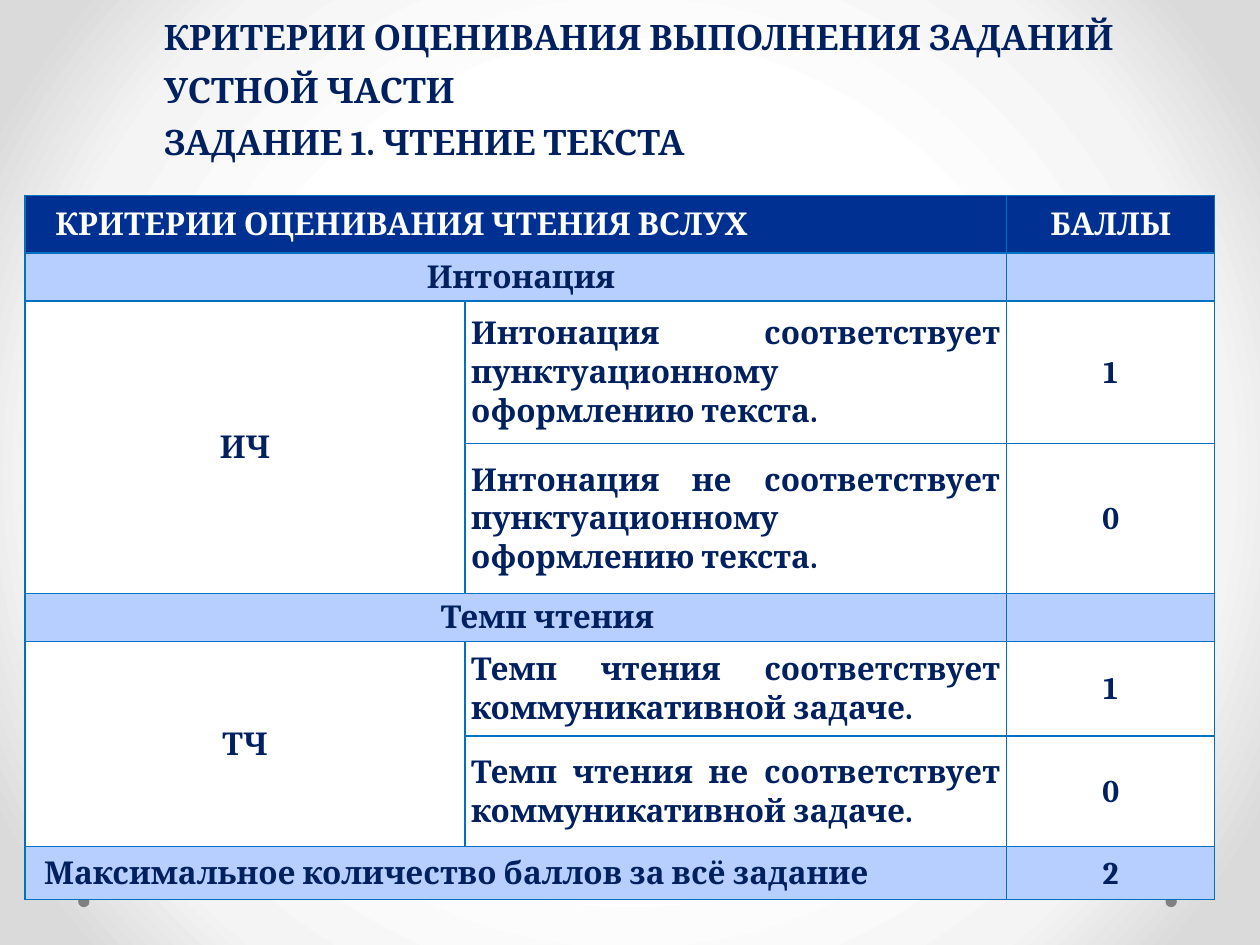
from pptx import Presentation
from pptx.dml.color import RGBColor
from pptx.enum.shapes import MSO_SHAPE as Shape
from pptx.enum.text import MSO_ANCHOR as Anchor, PP_ALIGN as Align
from pptx.oxml import parse_xml
from pptx.oxml.ns import nsdecls
from pptx.util import Inches, Pt

NAVY = RGBColor(0x00, 0x20, 0x60)
BLUE = RGBColor(0x00, 0x31, 0x92)
PALE = RGBColor(0xB7, 0xCF, 0xFF)
WHITE = RGBColor(0xFF, 0xFF, 0xFF)
GRAY = RGBColor(0x80, 0x80, 0x80)
EDGE = RGBColor(0x00, 0x70, 0xC0)

TITLE = ("КРИТЕРИИ ОЦЕНИВАНИЯ ВЫПОЛНЕНИЯ ЗАДАНИЙ\v"
         "УСТНОЙ ЧАСТИ\v"
         "ЗАДАНИЕ 1. ЧТЕНИЕ ТЕКСТА")
COLS = [3.49, 4.3, 1.65]
HEAD = ("КРИТЕРИИ ОЦЕНИВАНИЯ ЧТЕНИЯ ВСЛУХ", "БАЛЛЫ")
TOTAL = ("Максимальное количество баллов за всё задание", "2")
# name, left indent, code, then the criteria: text, score, row height
GROUPS = [
    ("Интонация", 0.08, "ИЧ", [
        ("Интонация соответствует пунктуационному оформлению текста.",
         "1", 1.13),
        ("Интонация не соответствует пунктуационному оформлению текста.",
         "0", 1.19)]),
    ("Темп чтения", 0.5, "ТЧ", [
        ("Темп чтения соответствует коммуникативной задаче.", "1", 0.75),
        ("Темп чтения не соответствует коммуникативной задаче.", "0", 0.88)]),
]


def write(frame, text, size=18, color=NAVY, align=Align.LEFT, space=1.07,
          indent=0):
    frame.word_wrap = True
    par = frame.paragraphs[0]
    par.text = text
    par.alignment = align
    par.line_spacing = space
    par.space_before = par.space_after = Pt(0)
    props = par._p.get_or_add_pPr()
    props.set("marL", str(Inches(indent)))
    props.set("indent", "0")
    font = par.font
    font.name, font.size, font.bold = "Cambria", Pt(size), True
    font.color.rgb = color
    for run in par.runs:
        run.font.name, run.font.size, run.font.bold = "Cambria", Pt(size), True
        run.font.color.rgb = color


class Page:
    def __init__(self, deck):
        self.slide = deck.slides.add_slide(deck.slide_layouts[5])

    def glow(self, stops):
        """Fill the background with a gradient that spreads from the centre."""
        marks = "".join(
            f'<a:gs pos="{pos * 1000}"><a:srgbClr val="{color}"/></a:gs>'
            for pos, color in stops)
        self.slide._element.cSld.insert(0, parse_xml(
            f'<p:bg {nsdecls("p", "a")}><p:bgPr><a:gradFill rotWithShape="1">'
            f'<a:gsLst>{marks}</a:gsLst><a:path path="circle">'
            '<a:fillToRect l="50000" t="50000" r="50000" b="50000"/></a:path>'
            '</a:gradFill><a:effectLst/></p:bgPr></p:bg>'))

    def title(self, text, left, top, width, height):
        box = self.slide.shapes.title
        box.left, box.top = Inches(left), Inches(top)
        box.width, box.height = Inches(width), Inches(height)
        frame = box.text_frame
        frame.margin_left = frame.margin_right = frame.margin_top = 0
        frame.margin_bottom = Inches(0.42)
        frame.vertical_anchor = Anchor.MIDDLE
        write(frame, text, size=20, space=Pt(30))

    def dot(self, left, top, size=0.09):
        dot = self.slide.shapes.add_shape(
            Shape.OVAL, Inches(left), Inches(top), Inches(size), Inches(size))
        dot.shadow.inherit = False
        dot.fill.solid()
        dot.fill.fore_color.rgb = GRAY
        dot.line.fill.background()

    def grid(self, left, top, cols, rows):
        frame = self.slide.shapes.add_table(
            len(rows), len(cols), Inches(left), Inches(top),
            Inches(sum(cols)), Inches(sum(rows)))
        table = frame.table
        table.first_row = table.horz_banding = False
        for col, width in zip(table.columns, cols):
            col.width = Inches(width)
        for row, height in zip(table.rows, rows):
            row.height = Inches(height)
        return table

    def cell(self, cell, text="", fill=WHITE, pad=0.05, **style):
        cell.margin_left = cell.margin_right = Inches(pad)
        cell.margin_top = cell.margin_bottom = 0
        cell.vertical_anchor = Anchor.MIDDLE
        props = cell._tc.get_or_add_tcPr()
        for side in "LRTB":
            props.append(parse_xml(
                f'<a:ln{side} {nsdecls("a")} w="{Pt(1)}"><a:solidFill>'
                f'<a:srgbClr val="{EDGE}"/></a:solidFill></a:ln{side}>'))
        cell.fill.solid()
        cell.fill.fore_color.rgb = fill
        write(cell.text_frame, text, **style)

    def band(self, table, row, text, score="", fill=PALE, color=NAVY, **style):
        """Fill a row whose first two cells are joined."""
        wide, ghost, last = (table.cell(row, col) for col in range(3))
        wide.merge(ghost)
        self.cell(wide, text, fill, color=color, **style)
        self.cell(ghost, fill=fill)
        self.cell(last, score, fill, 0.07, color=color, align=Align.CENTER)

    def group(self, table, row, code, items):
        """Fill one row per criterion beside a joined code cell."""
        table.cell(row, 0).merge(table.cell(row + len(items) - 1, 0))
        for step, (text, score, _) in enumerate(items):
            first, mid, last = (table.cell(row + step, c) for c in range(3))
            self.cell(first, "" if step else code, align=Align.CENTER)
            self.cell(mid, text, align=Align.JUSTIFY)
            self.cell(last, score, pad=0.07, align=Align.CENTER)


def main():
    deck = Presentation()
    deck.slide_width, deck.slide_height = Inches(10), Inches(7.5)
    page = Page(deck)
    page.glow([(50, "FFFFFF"), (76, "F4F4F4"), (92, "DADADA")])
    page.title(TITLE, 1.3, 0.52, 8.35, 0.71)
    for left in (9.25, 0.62):
        page.dot(left, 7.11)

    rows = [0.46]
    for *_, items in GROUPS:
        rows += [0.38] + [height for *_, height in items]
    rows.append(0.42)
    table = page.grid(0.2, 1.55, COLS, rows)

    page.band(table, 0, *HEAD, fill=BLUE, color=WHITE, indent=0.19)
    row = 1
    for name, indent, code, items in GROUPS:
        page.band(table, row, name, align=Align.CENTER, indent=indent)
        page.group(table, row + 1, code, items)
        row += 1 + len(items)
    page.band(table, row, *TOTAL, align=Align.JUSTIFY, indent=0.1)
    deck.save("out.pptx")


if __name__ == "__main__":
    main()
